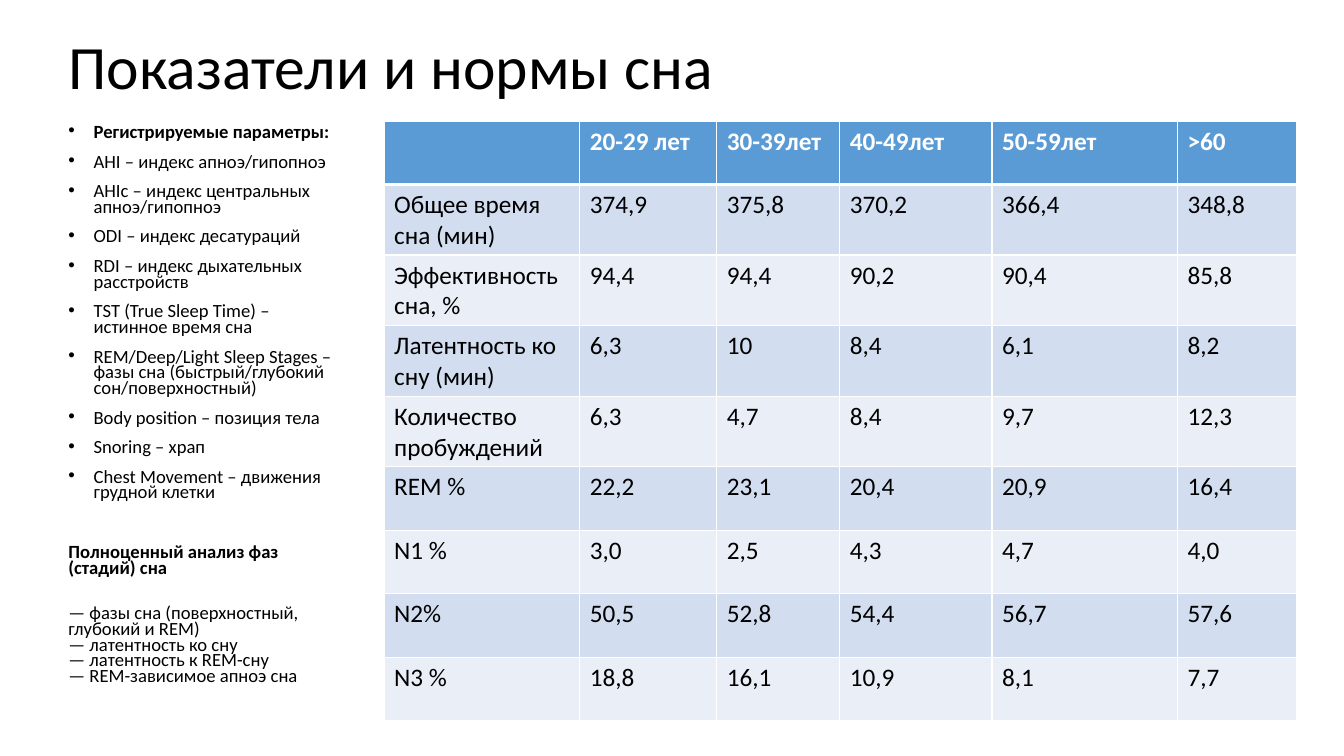
from lxml import etree
from pptx import Presentation
from pptx import util as u
from pptx.dml.color import RGBColor
from pptx.enum import text
from pptx.oxml import ns

BLACK = RGBColor(0x00, 0x00, 0x00)
WHITE = RGBColor(0xFF, 0xFF, 0xFF)
HEADER_BLUE = RGBColor(0x5B, 0x9B, 0xD5)
BAND_DARK = RGBColor(0xD2, 0xDE, 0xEF)
BAND_LIGHT = RGBColor(0xEA, 0xEF, 0xF7)

TITLE = "Показатели и нормы сна"
PARAMETERS_HEADING = "Регистрируемые параметры:"
PARAMETERS = [
    "AHI – индекс апноэ/гипопноэ",
    "AHIс – индекс центральных апноэ/гипопноэ",
    "ODI – индекс десатураций",
    "RDI – индекс дыхательных расстройств",
    "TST (True Sleep Time) – истинное время сна",
    "REM/Deep/Light Sleep Stages – фазы сна (быстрый/глубокий сон/поверхностный)",
    "Body position – позиция тела",
    "Snoring – храп",
    "Chest Movement – движения грудной клетки",
]
ANALYSIS_HEADING = "Полноценный анализ фаз (стадий) сна"
ANALYSIS = "\v".join([
    "— фазы сна (поверхностный, глубокий и REM)",
    "— латентность ко сну",
    "— латентность к REM-cну",
    "— REM-зависимое апноэ сна",
])
NORMS = [
    ["", "20-29 лет", "30-39лет", "40-49лет", "50-59лет", ">60"],
    ["Общее время сна (мин)", "374,9", "375,8", "370,2", "366,4", "348,8"],
    ["Эффективность сна, %", "94,4", "94,4", "90,2", "90,4", "85,8"],
    ["Латентность ко сну (мин)", "6,3", "10", "8,4", "6,1", "8,2"],
    ["Количество пробуждений", "6,3", "4,7", "8,4", "9,7", "12,3"],
    ["REM %", "22,2", "23,1", "20,4", "20,9", "16,4"],
    ["N1 %", "3,0", "2,5", "4,3", "4,7", "4,0"],
    ["N2%", "50,5", "52,8", "54,4", "56,7", "57,6"],
    ["N3 %", "18,8", "16,1", "10,9", "8,1", "7,7"],
]
AGE_WIDTHS = [1.94, 1.36, 1.22, 1.51, 1.84, 1.18]
ROW_HEIGHT = 0.63


class SleepSlide:
    font_name = "Calibri"

    def __init__(self, slide):
        self.slide = slide

    def style(self, paragraph, size, color=BLACK, bold=False):
        paragraph.font.name = self.font_name
        paragraph.font.size = u.Pt(size)
        paragraph.font.color.rgb = color
        paragraph.font.bold = bold

    def frame(self, left, top, width, height, anchor):
        box = self.slide.shapes.add_textbox(
            u.Inches(left), u.Inches(top), u.Inches(width), u.Inches(height))
        frame = box.text_frame
        frame.word_wrap = True
        frame.vertical_anchor = anchor
        return frame

    def title(self, wording):
        frame = self.frame(0.58, 0.18, 9.58, 1.02, text.MSO_ANCHOR.MIDDLE)
        heading = frame.paragraphs[0]
        heading.text = wording
        heading.line_spacing = 0.9
        self.style(heading, 44)

    def parameter_list(self, entries):
        frame = self.frame(0.58, 1.2, 2.81, 5.84, text.MSO_ANCHOR.TOP)
        for index, (wording, bold, bulleted, gap) in enumerate(entries):
            entry = frame.add_paragraph() if index else frame.paragraphs[0]
            entry.text = wording
            entry.line_spacing = 0.7
            entry.space_before = u.Pt(gap)
            self.style(entry, 13.3, bold=bold)
            if bulleted:
                self.bullet(entry)

    def bullet(self, paragraph):
        props = paragraph._p.get_or_add_pPr()
        props.set("marL", str(u.Inches(0.25)))
        props.set("indent", str(-u.Inches(0.25)))
        font = etree.Element(ns.qn("a:buFont"), typeface="Arial")
        mark = etree.Element(ns.qn("a:buChar"), char="•")
        defaults = props.find(ns.qn("a:defRPr"))
        defaults.addprevious(font)
        defaults.addprevious(mark)

    def borders(self, cell, bottom):
        props = cell._tc.get_or_add_tcPr()
        for side, width in (("L", 1), ("R", 1), ("T", 1), ("B", bottom)):
            line = etree.SubElement(props, ns.qn(f"a:ln{side}"))
            line.set("w", str(u.Pt(width)))
            fill = etree.SubElement(line, ns.qn("a:solidFill"))
            etree.SubElement(fill, ns.qn("a:srgbClr")).set("val", str(WHITE))

    def table(self, rows, widths, left, top):
        norms = self.slide.shapes.add_table(
            len(rows), len(widths), u.Inches(left), u.Inches(top),
            u.Inches(sum(widths)), u.Inches(ROW_HEIGHT * len(rows))).table
        for column, width in zip(norms.columns, widths):
            column.width = u.Inches(width)
        for r, row in enumerate(rows):
            header = r == 0
            band = HEADER_BLUE if header else BAND_DARK if r % 2 else BAND_LIGHT
            for c, wording in enumerate(row):
                cell = norms.cell(r, c)
                cell.text = wording
                self.borders(cell, 3 if header else 1)
                cell.fill.solid()
                cell.fill.fore_color.rgb = band
                self.style(cell.text_frame.paragraphs[0], 18,
                           WHITE if header else BLACK, header)


def main():
    deck = Presentation()
    deck.slide_width, deck.slide_height = u.Inches(13.33), u.Inches(7.5)
    page = SleepSlide(deck.slides.add_slide(deck.slide_layouts[6]))
    page.title(TITLE)
    page.parameter_list(
        [(PARAMETERS_HEADING, True, True, 10)]
        + [(parameter, False, True, 10) for parameter in PARAMETERS]
        + [(ANALYSIS_HEADING, True, False, 31.4), (ANALYSIS, False, False, 21.4)])
    page.table(NORMS, AGE_WIDTHS, 3.81, 1.2)
    deck.save("out.pptx")


if __name__ == "__main__":
    main()
